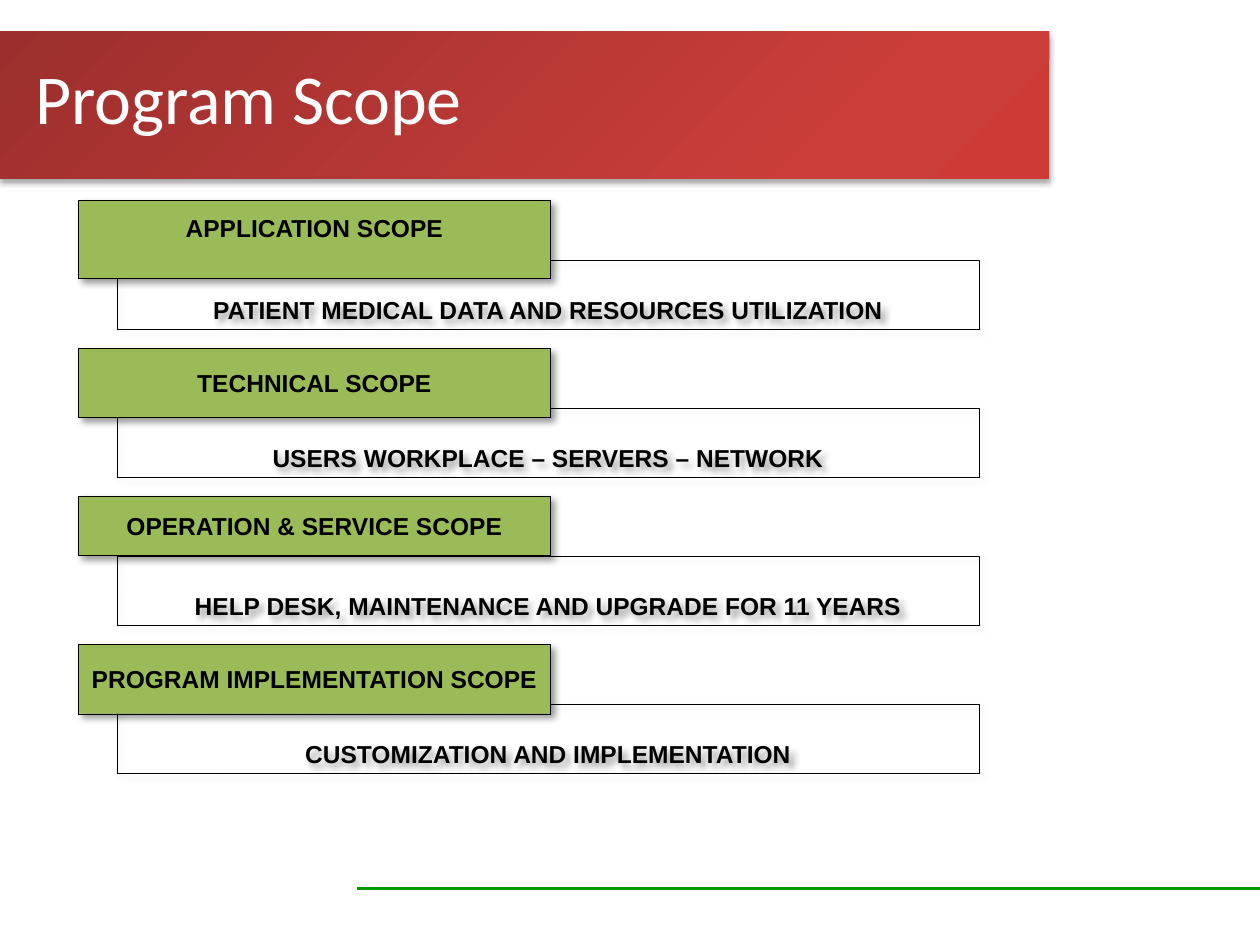
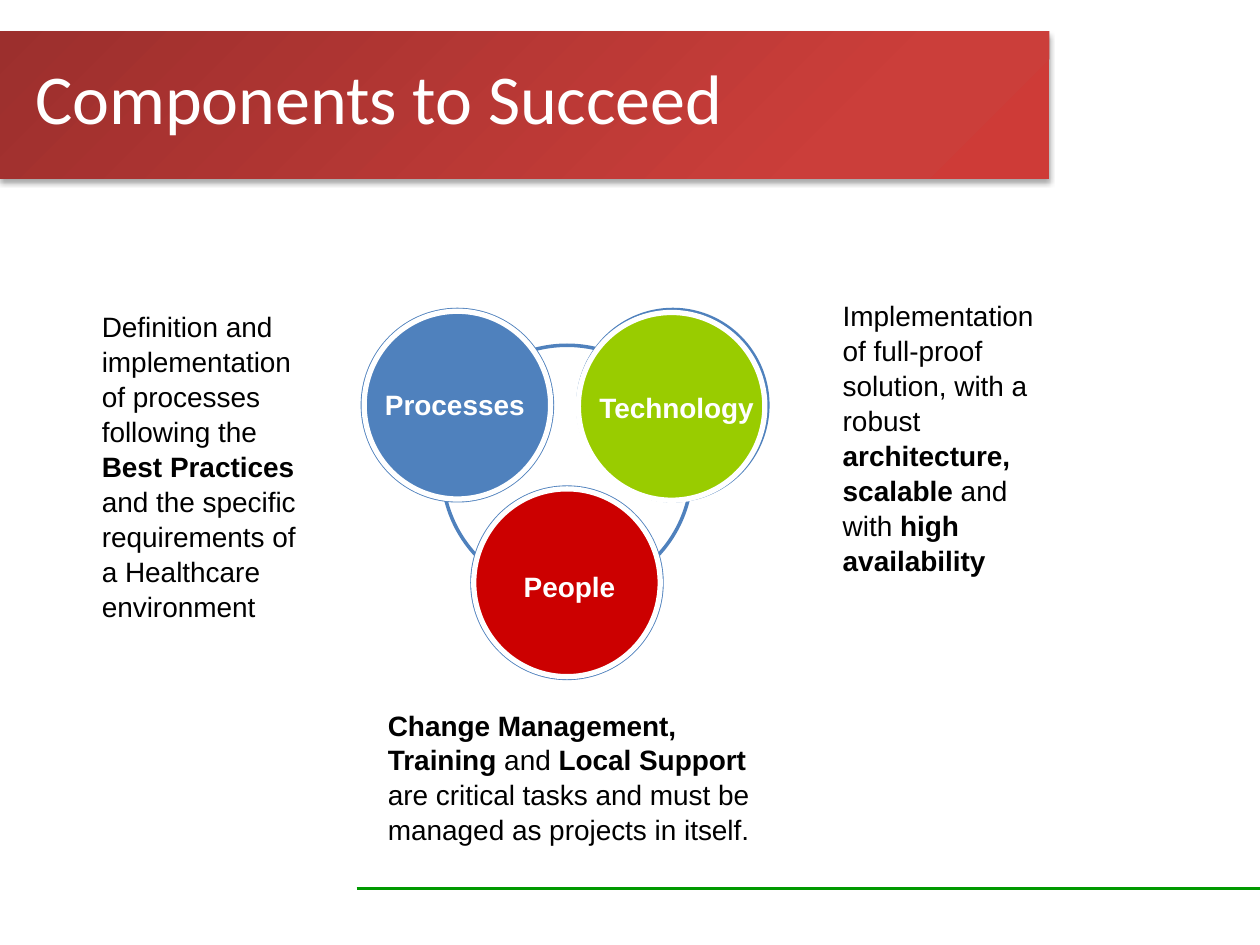
from dataclasses import dataclass
from lxml import etree
from pptx import Presentation
from pptx import util as u
from pptx.dml.color import RGBColor
from pptx.enum import dml, shapes, text
from pptx.oxml import parse_xml
from pptx.oxml.ns import nsdecls, qn


@dataclass(frozen=True)
class Theme:
    white: str = "FFFFFF"
    black: str = "000000"
    label: str = "9BBB59"
    blue: str = "4F81BD"
    lime: str = "99CC00"
    red: str = "CC0000"
    footer: str = "009900"
    banner: tuple = ((0, "9C2F2D"), (80, "CB3E3A"), (100, "CE3B37"))
    title_font: str = "Calibri"
    body_font: str = "Arial"
    title_size: int = 40
    body_size: int = 16
    scope_size: int = 14


theme = Theme()


def add_shape(page, kind, place, fill=None, line=None, width=1, shadow=None):
    shape = page.shapes.add_shape(kind, *map(u.Inches, place))
    shape.shadow.inherit = False
    if fill:
        shape.fill.solid()
        shape.fill.fore_color.rgb = RGBColor.from_string(fill)
    else:
        shape.fill.background()
    if line:
        shape.line.color.rgb = RGBColor.from_string(line)
        shape.line.width = u.Pt(width)
    else:
        shape.line.fill.background()
    if shadow:
        alpha, blur, distance, angle = shadow
        effects = shape._element.spPr.find(qn("a:effectLst"))
        effects.append(parse_xml(
            f'<a:outerShdw {nsdecls("a")} blurRad="{u.Pt(blur)}" dist="{u.Pt(distance)}" '
            f'dir="{angle * 60000}" algn="tl" rotWithShape="0"><a:srgbClr val="{theme.black}">'
            f'<a:alpha val="{alpha * 1000}"/></a:srgbClr></a:outerShdw>'))
    return shape


def write(box, spans, size, color, font=theme.body_font, align=text.PP_ALIGN.LEFT,
          anchor=text.MSO_ANCHOR.TOP, wrap=True):
    frame = box.text_frame
    frame.word_wrap = wrap
    frame.vertical_anchor = anchor
    para = frame.paragraphs[0]
    para.alignment = align
    para.font.size = u.Pt(size)
    para.font.name = font
    para.font.color.rgb = RGBColor.from_string(color)
    for words, bold in spans:
        span = para.add_run()
        span.text = words
        span.font.bold = bold
    return para


deck = Presentation()
deck.slide_width, deck.slide_height = u.Inches(10), u.Inches(7.5)
pages = []

for title in ("Program Scope", "Components to Succeed"):
    page = deck.slides.add_slide(deck.slide_layouts[6])
    pages.append(page)

    banner = add_shape(page, shapes.MSO_SHAPE.RECTANGLE, (0, 0.25, 8.33, 1.17),
                       shadow=(35, 3.1, 1.8, 90))
    stops = "".join(f'<a:gs pos="{at * 1000}"><a:srgbClr val="{color}"/></a:gs>'
                    for at, color in theme.banner)
    gradient = parse_xml(
        f'<a:gradFill {nsdecls("a")} rotWithShape="1"><a:gsLst>{stops}</a:gsLst>'
        '<a:path path="circle"><a:fillToRect r="100000" b="100000"/></a:path></a:gradFill>')
    properties = banner._element.spPr
    properties.replace(properties.find(qn("a:noFill")), gradient)

    footer = page.shapes.add_connector(shapes.MSO_CONNECTOR.STRAIGHT, u.Inches(2.83),
                                       u.Inches(7.05), u.Inches(10), u.Inches(7.05))
    footer.line.color.rgb = RGBColor.from_string(theme.footer)
    footer.line.width = u.Pt(1.5)
    etree.SubElement(footer._element.spPr, qn("a:effectLst"))

    heading = page.shapes.add_textbox(*map(u.Inches, (0.18, 0.38, 8.17, 1)))
    write(heading, [(title, False)], theme.title_size, theme.white, theme.title_font)

scope_page, success_page = pages

scopes = [
    ("APPLICATION SCOPE", 0.62, text.MSO_ANCHOR.TOP,
     "PATIENT MEDICAL DATA AND RESOURCES UTILIZATION"),
    ("TECHNICAL SCOPE", 0.55, text.MSO_ANCHOR.MIDDLE,
     "USERS WORKPLACE – SERVERS – NETWORK"),
    ("OPERATION & SERVICE SCOPE", 0.47, text.MSO_ANCHOR.MIDDLE,
     "HELP DESK, MAINTENANCE AND UPGRADE FOR 11 YEARS"),
    ("PROGRAM IMPLEMENTATION SCOPE", 0.55, text.MSO_ANCHOR.MIDDLE,
     "CUSTOMIZATION AND IMPLEMENTATION"),
]
for row, (name, height, anchor, detail) in enumerate(scopes):
    top = 1.59 + row * 1.175
    panels = [
        (detail, (0.93, top + 0.475, 6.84, 0.55), None, text.MSO_ANCHOR.BOTTOM),
        (name, (0.62, top, 3.75, height), theme.label, anchor),
    ]
    for words, place, fill, panel_anchor in panels:
        panel = add_shape(scope_page, shapes.MSO_SHAPE.RECTANGLE, place, fill,
                          theme.black, 0.25, shadow=(40, 4, 3, 45))
        panel.line.dash_style = dml.MSO_LINE.ROUND_DOT
        write(panel, [(words, True)], theme.scope_size, theme.black,
              align=text.PP_ALIGN.CENTER, anchor=panel_anchor, wrap=False)
        if panel_anchor == text.MSO_ANCHOR.TOP:
            panel.text_frame.margin_top = u.Inches(0.1)
        elif panel_anchor == text.MSO_ANCHOR.BOTTOM:
            panel.text_frame.margin_bottom = u.Inches(0.04)

circle = shapes.MSO_SHAPE.OVAL
disc_size = (1.48, 1.49)
components = [
    ("People", theme.red, (3.76, 3.88), (3.76, 3.88), (3.71, 4.47)),
    ("Technology", theme.lime, (4.6, 2.47), (4.59, 2.48), (4.56, 3.05)),
    ("Processes", theme.blue, (2.89, 2.47), (2.89, 2.47), (2.8, 3.03)),
]
add_shape(success_page, circle, (3.51, 2.74, 1.98, 1.98), theme.white, theme.blue, 2)
for name, color, ring_at, disc_at, label_at in components:
    add_shape(success_page, circle, ring_at + disc_size, theme.white, theme.blue, 4)
for name, color, ring_at, disc_at, label_at in components:
    add_shape(success_page, circle, disc_at + disc_size, color, theme.white, 3)
    label = success_page.shapes.add_textbox(*map(u.Inches, label_at + (1.62, 0.37)))
    write(label, [(name, True)], theme.body_size, theme.white, align=text.PP_ALIGN.CENTER)

notes = [
    ((0.71, 2.4, 1.86, 1.93), [
        ("Definition and implementation of processes following the ", False),
        ("Best Practices ", True),
        ("and the specific requirements of a Healthcare environment", False)]),
    ((6.59, 2.31, 1.8, 1.61), [
        ("Implementation of full-proof solution, with a robust ", False),
        ("architecture, scalable ", True),
        ("and with", False),
        (" high availability", True)]),
    ((2.98, 5.56, 3.31, 0.81), [
        ("Change Management, Training ", True),
        ("and", False),
        (" Local Support ", True),
        ("are critical tasks and must be managed as projects in itself.", False)]),
]
for place, spans in notes:
    box = success_page.shapes.add_textbox(*map(u.Inches, place))
    para = write(box, spans, theme.body_size, theme.black)
    para.line_spacing = 1.04

deck.save("out.pptx")
